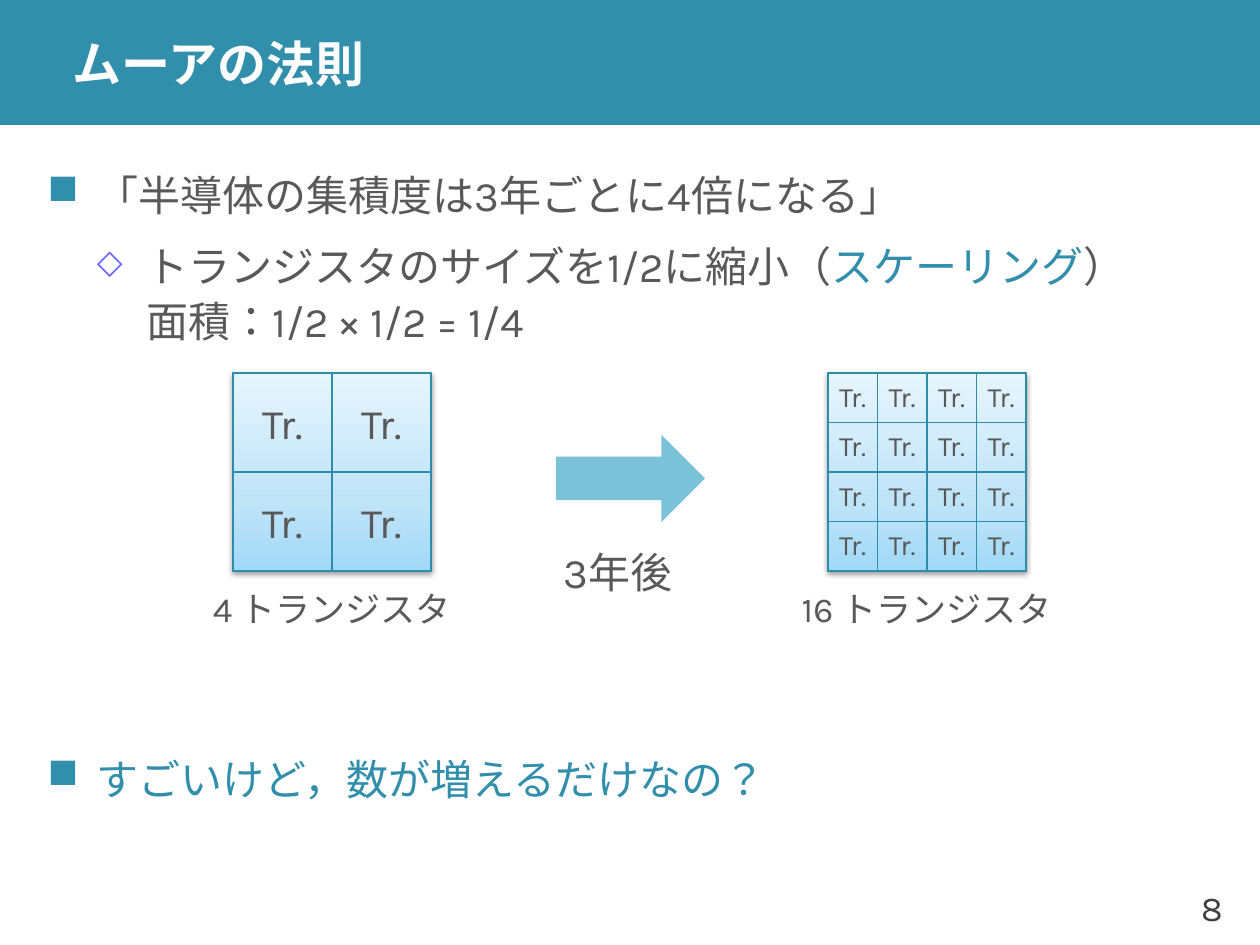
"""Build the slide on Moore's law."""
from copy import deepcopy

from lxml.etree import SubElement
from pptx import Presentation
from pptx.dml.color import RGBColor as RGB
from pptx.enum.lang import MSO_LANGUAGE_ID as LANGUAGE
from pptx.enum.shapes import MSO_SHAPE as SHAPE
from pptx.enum.text import MSO_ANCHOR as ANCHOR, PP_ALIGN as ALIGN
from pptx.oxml.ns import qn
from pptx.util import Emu, Pt

SCALE = 914400 / 126
COLORS = {
    "teal": "328FAC", "grey": "595959", "dark": "404040", "white": "FFFFFF",
    "violet": "6666FF", "edge": "2E8DAB", "arrow": "79C2D8", "shadow": "000000",
    "low": "A2D9F7", "middle": "BFE4F8", "high": "E6F5FD",
}
COLORS_RGB = {name: RGB.from_string(value) for name, value in COLORS.items()}


def place(*lengths):
    return [Emu(round(length * SCALE)) for length in lengths]


def write(frame, text, size, color, align=ALIGN.LEFT, wrap=True, anchor=ANCHOR.MIDDLE):
    frame.word_wrap = wrap
    frame.vertical_anchor = anchor
    para = frame.paragraphs[0]
    para.text = text
    para.alignment = align
    para.font.name = "Karla"
    para.font.size = Pt(size)
    para.font.color.rgb = COLORS_RGB[color]
    return para


deck = Presentation()
deck.slide_width, deck.slide_height = place(1260, 945)
page = deck.slides.add_slide(deck.slide_layouts[6])
shapes = page.shapes

banner = shapes.add_shape(SHAPE.RECTANGLE, *place(0, 0, 1260, 125))
banner.shadow.inherit = False
banner.fill.solid()
banner.fill.fore_color.rgb = COLORS_RGB["teal"]
banner.line.fill.background()

number_box = shapes.add_textbox(*place(1150, 870, 85, 76))
write(number_box.text_frame, "8", 20, "dark", ALIGN.RIGHT)

title_box = shapes.add_textbox(*place(60, 0, 1200, 125))
title_box.text_frame.margin_top = title_box.text_frame.margin_bottom = 0
write(title_box.text_frame, "ムーアの法則", 28, "white").font.bold = True

# top, then paragraphs of (level, [(text, color), ...])
bullet_boxes = [
    (150, [
        (0, [("「半導体の集積度は3年ごとに4倍になる」", "grey")]),
        (1, [("トランジスタのサイズを1/2に縮小（", "grey"), ("スケーリング", "teal"),
             ("）\v面積：1/2 × 1/2 = 1/4", "grey")]),
    ]),
    (671, [(0, [("すごいけど，数が増えるだけなの？", "teal")])]),
]
bullet_styles = [("■", "teal", 100, 24, 6), ("◇", "violet", 80, 3, 3)]
for top, paragraphs in bullet_boxes:
    box = shapes.add_textbox(*place(35, top, 1191, 210))
    frame = box.text_frame
    frame.word_wrap = True
    frame.vertical_anchor = ANCHOR.MIDDLE
    for index, (level, spans) in enumerate(paragraphs):
        para = frame.add_paragraph() if index else frame.paragraphs[0]
        mark, mark_color, mark_size, before, after = bullet_styles[level]
        para.level = level
        para.line_spacing = 1.1
        para.space_before, para.space_after = Pt(before), Pt(after)
        props = para._p.get_or_add_pPr()
        margin, indent = place(49.5 * (level + 1), -49.5)
        props.set("marL", str(margin))
        props.set("indent", str(indent))
        mark_fill = SubElement(props, qn("a:buClr"))
        SubElement(mark_fill, qn("a:srgbClr"), val=COLORS[mark_color])
        SubElement(props, qn("a:buSzPct"), val=str(mark_size * 1000))
        SubElement(props, qn("a:buFont"), typeface="OpenSymbol")
        SubElement(props, qn("a:buChar"), char=mark)
        para.font.name = "Karla"
        para.font.size = Pt(24)
        for text, color in spans:
            for part, piece in enumerate(text.split("\v")):
                if part:
                    para.add_line_break()
                span = para.add_run()
                span.text = piece
                span.font.language_id = LANGUAGE.JAPANESE
                span.font.color.rgb = COLORS_RGB[color]

chip_top, chip_side = 373, 198
# left, cells per side, text size, anchor
chips = [(233, 2, 24, ANCHOR.MIDDLE), (828, 4, 16, ANCHOR.TOP)]
for left, count, size, anchor in chips:
    chip = shapes.add_shape(SHAPE.RECTANGLE, *place(left, chip_top, chip_side, chip_side))
    chip.line.color.rgb = COLORS_RGB["edge"]
    chip.line.width = Pt(0.75)
    chip.fill.gradient()
    chip.fill.gradient_angle = 90
    stop_list = chip._element.spPr.find(".//" + qn("a:gsLst"))
    stop_list.append(deepcopy(stop_list[-1]))
    for stop, position, name in zip(chip.fill.gradient_stops, (0, 0.35, 1), ("low", "middle", "high")):
        stop.position = position
        stop.color.rgb = COLORS_RGB[name]
    chip.shadow.inherit = False
    effects = chip._element.spPr.find(qn("a:effectLst"))
    shade = SubElement(effects, qn("a:outerShdw"), blurRad="40000", dist="20000",
                       dir="5400000", rotWithShape="0")
    shade_color = SubElement(shade, qn("a:srgbClr"), val=COLORS["shadow"])
    SubElement(shade_color, qn("a:alpha"), val="38000")

    step = chip_side / count
    for row in range(count):
        for column in range(count):
            cell = shapes.add_shape(SHAPE.RECTANGLE, *place(
                left + column * step, chip_top + row * step, step, step))
            cell.shadow.inherit = False
            cell.fill.background()
            cell.line.color.rgb = COLORS_RGB["edge"]
            cell.line.width = Pt(0.75)
            write(cell.text_frame, "Tr.", size, "grey", ALIGN.CENTER, count == 2, anchor)

arrow = shapes.add_shape(SHAPE.RIGHT_ARROW, *place(556, 435, 149, 87))
arrow.shadow.inherit = False
arrow.fill.solid()
arrow.fill.fore_color.rgb = COLORS_RGB["arrow"]
arrow.line.fill.background()

caption_width = 300
# center, top, text, size
captions = [
    (618, 522, "3年後", 24),
    (332, 559, "4 トランジスタ", 20),
    (927, 559, "16 トランジスタ", 20),
]
for center, top, text, size in captions:
    caption = shapes.add_textbox(*place(center - caption_width / 2, top, caption_width, 99))
    write(caption.text_frame, text, size, "grey", ALIGN.CENTER)

deck.save("out.pptx")
